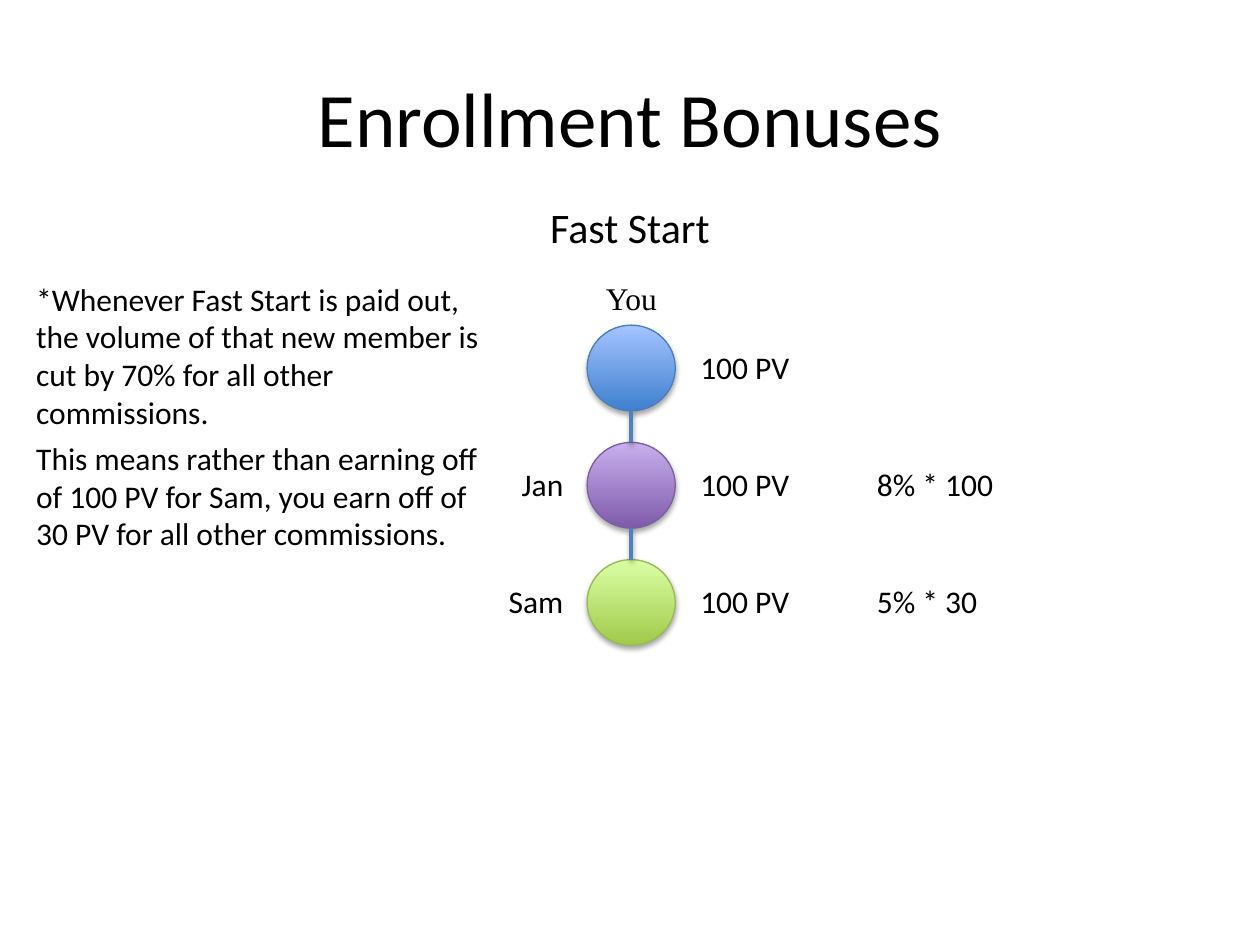
from dataclasses import dataclass

from lxml import etree
from pptx import Presentation
from pptx.dml.color import RGBColor
from pptx.enum import shapes, text
from pptx.oxml import ns
from pptx.util import Pt


@dataclass(frozen=True)
class Theme:
    """Colours, fonts and type sizes of the slide."""
    ink: str = "000000"
    link: str = "4F81BD"
    blue: tuple = ("3F80CE", "A4C4FF", "4B7EBC")
    purple: tuple = ("7F5BAB", "C8B0ED", "7D60A0")
    green: tuple = ("A0CA4A", "DAFFA5", "98B955")
    font: str = "Calibri"
    serif: str = "Times New Roman"
    title: int = 44
    subtitle: int = 24
    body: int = 18


THEME = Theme()


def add_text(slide, box, words, size=THEME.body, font=THEME.font, align=text.PP_ALIGN.LEFT,
             anchor=text.MSO_ANCHOR.TOP, wrap=False):
    """Place one paragraph of text in a box given in points."""
    frame = slide.shapes.add_textbox(*map(Pt, box)).text_frame
    frame.word_wrap = wrap
    frame.vertical_anchor = anchor
    paragraph = frame.paragraphs[0]
    paragraph.text = words
    paragraph.alignment = align
    paragraph.font.size = Pt(size)
    paragraph.font.name = font
    paragraph.font.color.rgb = RGBColor.from_string(THEME.ink)


def add_shadow(properties, opacity, distance):
    """Give shape properties a soft shadow that falls straight down."""
    effects = properties.find(ns.qn("a:effectLst"))
    if effects is None:
        effects = etree.SubElement(properties, ns.qn("a:effectLst"))
    shadow = etree.SubElement(effects, ns.qn("a:outerShdw"), blurRad=str(Pt(3.1)),
                              dist=str(Pt(distance)), dir="5400000", rotWithShape="0")
    color = etree.SubElement(shadow, ns.qn("a:srgbClr"), val=THEME.ink)
    etree.SubElement(color, ns.qn("a:alpha"), val=str(opacity * 1000))


def add_member(slide, box, colors):
    """Draw one member as a shaded circle."""
    shape = slide.shapes.add_shape(shapes.MSO_SHAPE.FLOWCHART_CONNECTOR, *map(Pt, box))
    *shades, outline = map(RGBColor.from_string, colors)
    shape.fill.gradient()
    shape.fill.gradient_angle = 90
    for stop, shade in zip(shape.fill.gradient_stops, shades):
        stop.color.rgb = shade
    shape.line.color.rgb = outline
    shape.line.width = Pt(0.75)
    shape.shadow.inherit = False
    add_shadow(shape.element.spPr, 35, 1.8)


def add_link(slide, x, top, bottom):
    """Join two members with a vertical line."""
    line = slide.shapes.add_connector(shapes.MSO_CONNECTOR.STRAIGHT, *map(Pt, (x, top, x, bottom)))
    line.line.color.rgb = RGBColor.from_string(THEME.link)
    line.line.width = Pt(2)
    add_shadow(line.element.spPr, 38, 1.6)


def add_heading(slide, box):
    """Place the title with the subtitle centred below it."""
    left, top, width, height = box
    add_text(slide, box, "Enrollment Bonuses", THEME.title, align=text.PP_ALIGN.CENTER,
             anchor=text.MSO_ANCHOR.MIDDLE, wrap=True)
    subtitle_width = 106
    add_text(slide, (left + (width - subtitle_width) / 2, top + height, subtitle_width, 36),
             "Fast Start", THEME.subtitle, align=text.PP_ALIGN.CENTER)


def add_explanation(slide, box):
    """Place the two explanatory notes one under the other."""
    left, top, width, height = box
    second = 91
    add_text(slide, (left, top, width - 2, 94.3),
             "*Whenever Fast Start is paid out, the volume of that new member "
             "is cut by 70% for all other commissions.", wrap=True)
    add_text(slide, (left, top + second, width, height - second),
             "This means rather than earning off of 100 PV for Sam, you earn off of "
             "30 PV for all other commissions.", wrap=True)


def add_chain(slide, box):
    """Draw the chain of members with names, volumes and bonus rates."""
    left, top, width, height = box
    label_height, circle_width, circle_height = 28.8, 50.4, 49
    members = (("", 0, THEME.blue, "", 0),
               ("Jan", 40.3, THEME.purple, "8% * 100", 81.4),
               ("Sam", 46, THEME.green, "5% * 30", 74.9))
    first = top + 29.6
    step = (top + height - circle_height - first) / (len(members) - 1)
    circle_left = left + 52.5
    add_text(slide, (circle_left + 3.6, top, 54, label_height), "You", font=THEME.serif)
    for index, (name, name_width, colors, rate, rate_width) in enumerate(members):
        y = first + index * step
        label_top = y + 9.4
        add_member(slide, (circle_left, y, circle_width, circle_height), colors)
        add_text(slide, (circle_left + 57.6, label_top, 69.1, label_height), "100 PV")
        if name:
            add_text(slide, (circle_left - 6.5 - name_width, label_top, name_width, label_height),
                     name, align=text.PP_ALIGN.RIGHT)
            add_text(slide, (left + width - 81.4, label_top, rate_width, label_height), rate)
    for index in range(1, len(members)):
        y = first + index * step
        add_link(slide, circle_left + circle_width / 2, y - step + circle_height, y)


def main():
    """Build the slide and save it."""
    presentation = Presentation()
    presentation.slide_width, presentation.slide_height = Pt(720), Pt(540)
    slide = presentation.slides.add_slide(presentation.slide_layouts[6])
    add_heading(slide, (36, 21.6, 648, 90))
    add_explanation(slide, (13.6, 156.2, 271.4, 163.7))
    add_chain(slide, (283, 156.2, 292.4, 212.6))
    presentation.save("out.pptx")


if __name__ == "__main__":
    main()
